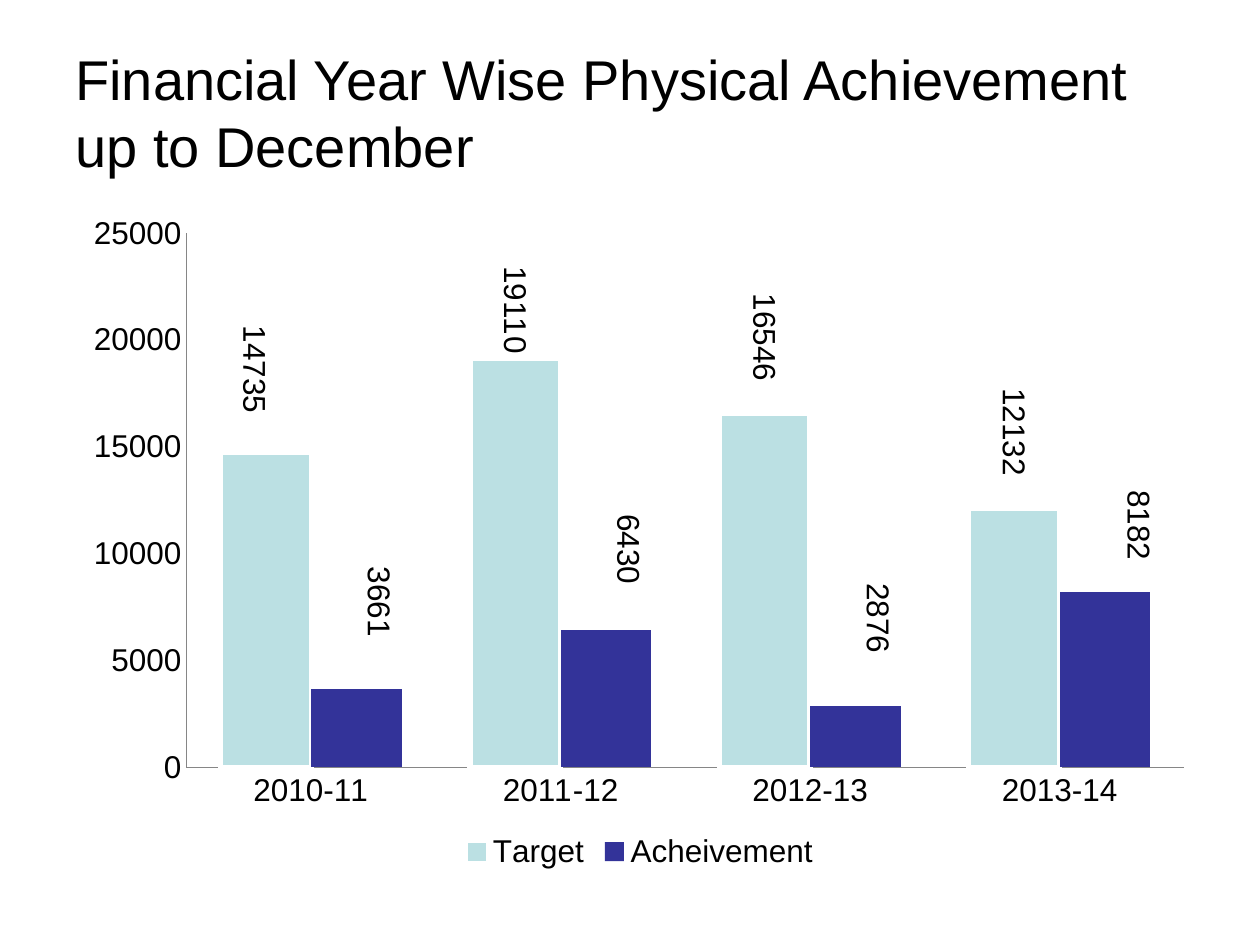
"""Build a slide comparing yearly physical targets with achievement."""
from lxml.etree import SubElement
from pptx import Presentation
from pptx.chart.data import CategoryChartData
from pptx.dml.color import RGBColor
from pptx.enum.chart import XL_CHART_TYPE as ChartType, XL_LABEL_POSITION as LabelPos
from pptx.enum.chart import XL_LEGEND_POSITION as LegendPos, XL_TICK_MARK as Tick
from pptx.enum.text import MSO_ANCHOR as Anchor
from pptx.oxml.ns import qn
from pptx.util import Inches, Pt

TITLE = "Financial Year Wise Physical Achievement up to December"
YEARS = ["2010-11", "2011-12", "2012-13", "2013-14"]
RESULTS = {
    "Target": [14735, 19110, 16546, 12132],
    "Acheivement": [3661, 6430, 2876, 8182],
}
LABEL_SHIFTS = {
    "Target": [(-0.01, -0.05), (0, 0), (0, -0.04), (0, -0.04)],
    "Acheivement": [(0.02, -0.07), (0.02, -0.06), (0.02, -0.07), (0.03, -0.04)],
}
COLORS = {"Target": "BBE0E3", "Acheivement": "333399", "text": "000000",
          "axis": "868686", "edge": "FFFFFF"}
FONT = "Arial"
WIDTH, HEIGHT = Inches(10), Inches(7.5)
PLOT = {"layoutTarget": "inner", "xMode": "edge", "yMode": "edge",
        "x": 0.1, "y": 0.05, "w": 0.88, "h": 0.79}
C15 = "http://schemas.microsoft.com/office/drawing/2012/chart"
LABEL_EXT = "{CE6537A1-D6FC-4f65-9D91-7224C49458BB}"


def rgb(name):
    return RGBColor.from_string(COLORS[name])


def style(font, size):
    font.name, font.size, font.color.rgb = FONT, Pt(size), rgb("text")


def set_layout(layout, values):
    for old in list(layout):
        layout.remove(old)
    manual = SubElement(layout, qn("c:manualLayout"))
    for tag, value in values.items():
        SubElement(manual, qn(f"c:{tag}")).set("val", str(value))


def hide_leader_lines(labels):
    for leader in list(labels.iter(qn("c:showLeaderLines"))):
        leader.set("val", "0")
    extension = SubElement(SubElement(labels, qn("c:extLst")), qn("c:ext"), nsmap={"c15": C15})
    extension.set("uri", LABEL_EXT)
    SubElement(extension, f"{{{C15}}}showLeaderLines").set("val", "0")


def add_title(slide):
    title = slide.shapes.add_textbox(
        int(WIDTH * 0.05), Inches(0.26), int(WIDTH * 0.9), Inches(1.25)).text_frame
    title.word_wrap, title.vertical_anchor = True, Anchor.MIDDLE
    title.text = TITLE
    style(title.paragraphs[0].font, 32)


def style_axis(axis):
    axis.major_tick_mark = axis.minor_tick_mark = Tick.NONE
    axis.has_major_gridlines = False
    axis.format.line.color.rgb = rgb("axis")
    axis.format.line.width = Pt(0.75)


def style_series(series):
    series.format.fill.solid()
    series.format.fill.fore_color.rgb = rgb(series.name)
    series.data_labels.show_value = True
    for index in range(len(YEARS)):
        label = series.points[index].data_label
        style(label.font, 18)
        label.position = LabelPos.OUTSIDE_END
    for label, (x, y) in zip(series._element.iter(qn("c:dLbl")), LABEL_SHIFTS[series.name]):
        body = next(label.iter(qn("a:bodyPr")))
        body.set("rot", "5400000")
        body.set("vert", "horz")
        layout = SubElement(label, qn("c:layout"))
        label.insert(1, layout)
        set_layout(layout, {"x": x, "y": y})
    hide_leader_lines(series._element.find(qn("c:dLbls")))


def add_results(slide):
    data = CategoryChartData()
    data.categories = YEARS
    for name, values in RESULTS.items():
        data.add_series(name, values)
    chart = slide.shapes.add_chart(
        ChartType.COLUMN_CLUSTERED, Inches(0.58), Inches(1.58), Inches(9), Inches(5.37), data).chart
    style(chart.font, 18)
    chart.has_title = False
    chart.has_legend = True
    chart.legend.position, chart.legend.include_in_layout = LegendPos.BOTTOM, False
    for axis in (chart.category_axis, chart.value_axis):
        style_axis(axis)
    chart.value_axis.minimum_scale, chart.value_axis.maximum_scale = 0, 25000
    chart.value_axis.major_unit = 5000
    columns = chart.plots[0]
    columns.gap_width, columns.overlap, columns.vary_by_categories = 75, 0, False
    for series in columns.series:
        style_series(series)
    target, achievement = columns.series
    target.format.line.color.rgb, target.format.line.width = rgb("edge"), Pt(3)
    achievement.format.line.fill.background()
    area = next(chart._chartSpace.iter(qn("c:plotArea")))
    layout = area.find(qn("c:layout"))
    if layout is None:
        layout = SubElement(area, qn("c:layout"))
        area.insert(0, layout)
    set_layout(layout, PLOT)


def main():
    deck = Presentation()
    deck.slide_width, deck.slide_height = WIDTH, HEIGHT
    slide = deck.slides.add_slide(deck.slide_layouts[6])
    add_title(slide)
    add_results(slide)
    deck.save("out.pptx")


if __name__ == "__main__":
    main()
